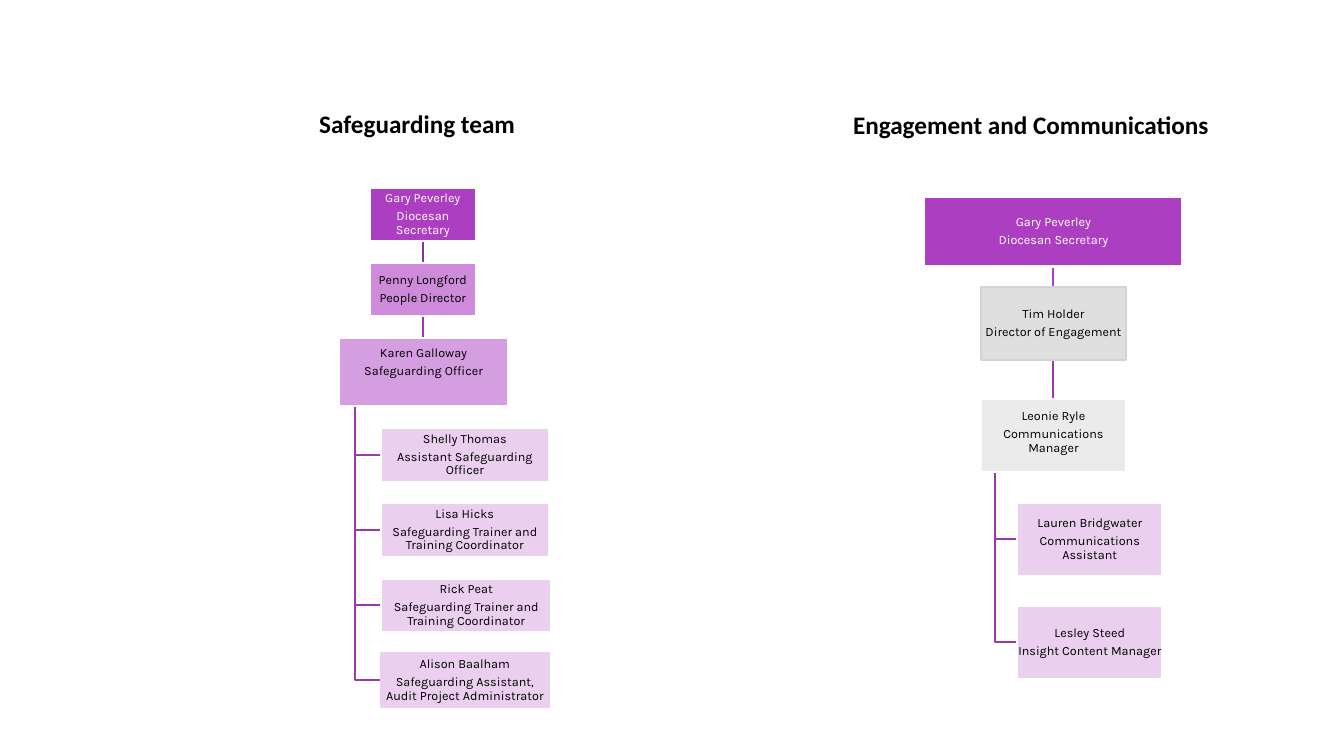
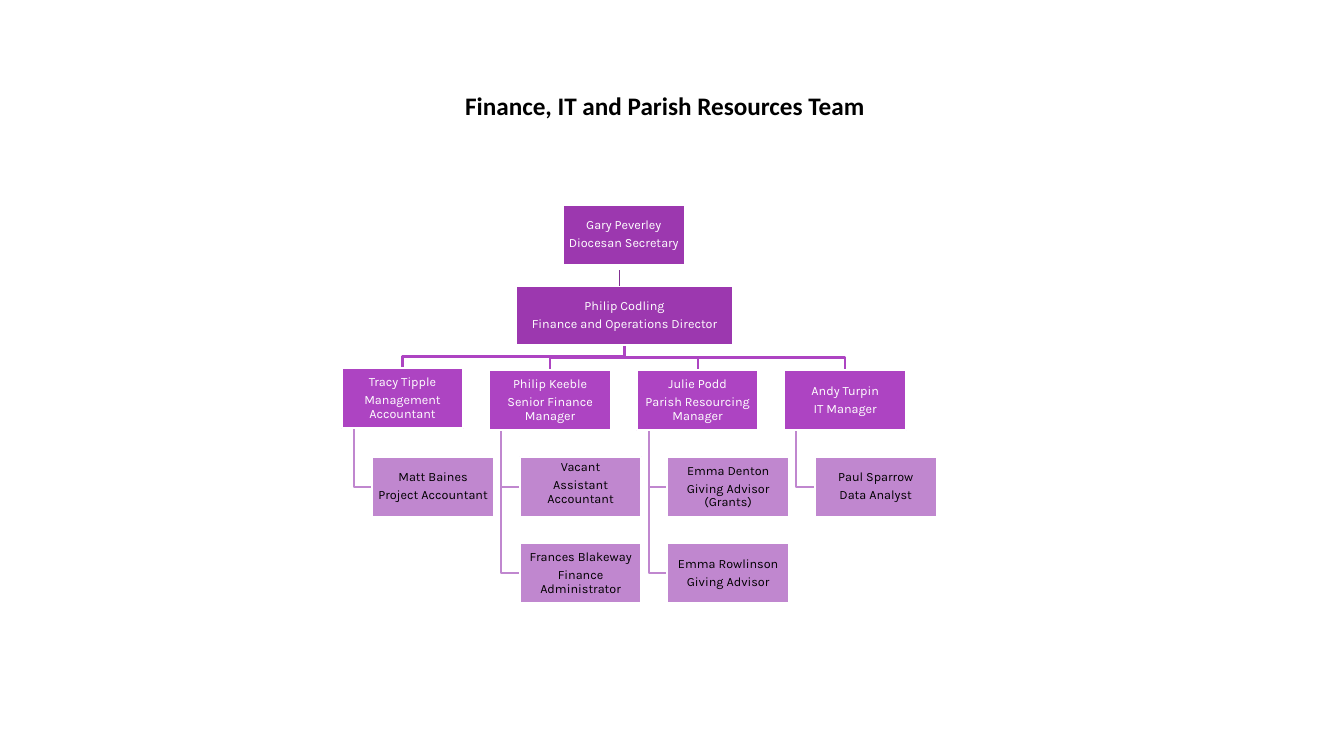
from dataclasses import dataclass

from lxml import etree
from pptx import Presentation
from pptx.dml.color import RGBColor
from pptx.enum import shapes, text
from pptx.oxml import ns
from pptx.util import Pt

WHITE = RGBColor(0xFF, 0xFF, 0xFF)
BLACK = RGBColor(0x00, 0x00, 0x00)
PURPLE = RGBColor(0xAC, 0x3E, 0xC1)
ORCHID = RGBColor(0xCD, 0x8B, 0xDA)
LILAC = RGBColor(0xD5, 0x9E, 0xE0)
PALE = RGBColor(0xEA, 0xCF, 0xEF)
DEEP = RGBColor(0x9C, 0x38, 0xAF)
PLUM = RGBColor(0x8A, 0x32, 0x9B)
DARK = RGBColor(0x81, 0x2F, 0x91)
VIOLET = RGBColor(0xAD, 0x44, 0xC2)
MAUVE = RGBColor(0xC0, 0x87, 0xCF)
GREY = RGBColor(0xDF, 0xDF, 0xDF)
GREY_EDGE = RGBColor(0xD3, 0xD3, 0xD3)
LIGHT_GREY = RGBColor(0xEB, 0xEB, 0xEB)

HEADING_FONT = "Calibri"
CARD_FONT = "Karla"
LINE_WIDTH = 1.5
TITLE_ONLY = 5


@dataclass
class Box:
    left: float
    top: float
    width: float
    height: float

    @property
    def center(self):
        return self.left + self.width / 2

    @property
    def middle(self):
        return self.top + self.height / 2

    @property
    def bottom(self):
        return self.top + self.height

    @property
    def points(self):
        return [Pt(n) for n in (self.left, self.top, self.width, self.height)]

    def inner(self, left, top, width, height):
        return Box(self.left + left, self.top + top, width, height)


def set_heading(shape, box, wording):
    shape.left, shape.top, shape.width, shape.height = box.points
    frame = shape.text_frame
    frame.text = wording
    frame.word_wrap = True
    frame.auto_size = text.MSO_AUTO_SIZE.NONE
    frame.vertical_anchor = text.MSO_ANCHOR.MIDDLE
    para = frame.paragraphs[0]
    para.alignment = text.PP_ALIGN.CENTER
    para.font.name = HEADING_FONT
    para.font.size = Pt(18)
    para.font.bold = True
    para.font.color.rgb = BLACK


def add_card(page, box, name, role, fill, ink=BLACK, edge=WHITE, lift=0):
    card = page.shapes.add_shape(shapes.MSO_SHAPE.RECTANGLE, *box.points)
    card.shadow.inherit = False
    card.fill.solid()
    card.fill.fore_color.rgb = fill
    card.line.color.rgb = edge
    card.line.width = Pt(LINE_WIDTH)
    frame = card.text_frame
    frame.word_wrap = True
    frame.vertical_anchor = text.MSO_ANCHOR.MIDDLE
    frame.margin_left = frame.margin_right = frame.margin_top = Pt(0.5)
    frame.margin_bottom = Pt(0.5 + lift)
    frame.text = f"{name}\n{role}"
    for para in frame.paragraphs:
        para.alignment = text.PP_ALIGN.CENTER
        para.line_spacing = 0.9
        para.space_after = Pt(3.15)
        para.font.name = CARD_FONT
        para.font.size = Pt(9)
        para.font.color.rgb = ink


def add_drop(page, x, top, bottom, color, width=LINE_WIDTH):
    drop = page.shapes.add_connector(
        shapes.MSO_CONNECTOR.STRAIGHT, Pt(x), Pt(top), Pt(x), Pt(bottom))
    drop.line.color.rgb = color
    drop.line.width = Pt(width)
    etree.SubElement(drop._element.spPr, ns.qn("a:effectLst"))


def add_bend(page, points, color):
    start, *rest = [(Pt(x), Pt(y)) for x, y in points]
    builder = page.shapes.build_freeform(*start)
    builder.add_line_segments(rest, close=False)
    bend = builder.convert_to_shape()
    bend.shadow.inherit = False
    bend.fill.background()
    bend.line.color.rgb = color
    bend.line.width = Pt(LINE_WIDTH)


def add_reports(page, parent, children, trunk, color):
    for child in children:
        add_bend(page, [(trunk, parent.bottom), (trunk, child.middle),
                        (child.left, child.middle)], color)


def add_safeguarding(page, area):
    pitch = 53.6
    secretary = area.inner(22, 0, 76, 38)
    director = area.inner(22, pitch, 76, 38)
    officer = area.inner(0, 2 * pitch, 121, 49)
    team = [
        ("Shelly Thomas", "Assistant Safeguarding Officer", 120, WHITE),
        ("Lisa Hicks", "Safeguarding Trainer and Training Coordinator", 120, WHITE),
        ("Rick Peat", "Safeguarding Trainer and Training Coordinator", 122, WHITE),
        ("Alison Baalham", "Safeguarding Assistant, Audit Project Administrator",
         120, PALE),
    ]
    boxes = [area.inner(30, 172 + row * pitch, member[2], 38)
             for row, member in enumerate(team)]
    add_reports(page, officer, boxes, area.left + 11.5, DEEP)
    add_drop(page, secretary.center, secretary.bottom, director.top, PLUM)
    add_drop(page, director.center, director.bottom, officer.top, DEEP)
    add_card(page, secretary, "Gary Peverley", "Diocesan Secretary", PURPLE, WHITE)
    add_card(page, director, "Penny Longford", "People Director", ORCHID)
    add_card(page, officer, "Karen Galloway", "Safeguarding Officer", LILAC, lift=14)
    for box, (name, role, _, edge) in zip(boxes, team):
        add_card(page, box, name, role, PALE, edge=edge)


def add_engagement(page, area):
    secretary = area.inner(0, 0, 184.5, 50)
    director = area.inner(40.25, 64.8, 104, 52)
    manager = area.inner(40.25, 144.8, 104, 52)
    team = [("Lauren Bridgwater", "Communications Assistant"),
            ("Lesley Steed", "Insight Content Manager")]
    boxes = [area.inner(66.2, 218.8 + row * 73.6, 104, 52)
             for row in range(len(team))]
    add_reports(page, manager, boxes, area.left + 50.5, DEEP)
    add_drop(page, director.center, director.bottom, manager.top, DEEP)
    add_drop(page, secretary.center, secretary.bottom, director.top, PURPLE)
    add_card(page, secretary, "Gary Peverley", "Diocesan Secretary", PURPLE, WHITE)
    add_card(page, director, "Tim Holder", "Director of Engagement", GREY,
             edge=GREY_EDGE)
    add_card(page, manager, "Leonie Ryle", "Communications Manager", LIGHT_GREY,
             lift=4.5)
    for box, member in zip(boxes, team):
        add_card(page, box, *member, PALE)


def add_finance(page, area):
    width, height = 87, 43
    secretary = area.inner(158, 0, width, height)
    director = area.inner(124.6, 58.4, 155, 41.8)
    teams = [
        (("Tracy Tipple", "Management Accountant"), 116.8,
         [("Matt Baines", "Project Accountant", 0)]),
        (("Philip Keeble", "Senior Finance Manager"), 118.2,
         [("Vacant", "Assistant Accountant", 5),
          ("Frances Blakeway", "Finance Administrator", 0)]),
        (("Julie Podd", "Parish Resourcing Manager"), 118.2,
         [("Emma Denton", "Giving Advisor (Grants)", 0),
          ("Emma Rowlinson", "Giving Advisor", 0)]),
        (("Andy Turpin", "IT Manager"), 118.2,
         [("Paul Sparrow", "Data Analyst", 0)]),
    ]
    for column, (lead, top, reports) in enumerate(teams):
        left = column * 105.4
        manager = area.inner(left, top, width, height)
        boxes = [area.inner(left + 21.8, 180 + row * 61.9, width, height)
                 for row in range(len(reports))]
        turn = (director.bottom + manager.top) / 2
        add_bend(page, [(director.center, director.bottom), (director.center, turn),
                        (manager.center, turn), (manager.center, manager.top)], VIOLET)
        add_reports(page, manager, boxes, manager.left + 8.7, MAUVE)
        add_card(page, manager, *lead, VIOLET, WHITE)
        for box, (name, role, lift) in zip(boxes, reports):
            add_card(page, box, name, role, MAUVE, lift=lift)
    add_card(page, secretary, "Gary Peverley", "Diocesan Secretary", DEEP, WHITE)
    add_card(page, director, "Philip Codling", "Finance and Operations Director",
             DEEP, WHITE)
    add_drop(page, area.left + 198.8, secretary.bottom + 3.8, director.top, DARK, 0.75)


def add_page(deck, box, heading):
    page = deck.slides.add_slide(deck.slide_layouts[TITLE_ONLY])
    set_heading(page.shapes.title, box, heading)
    return page


def main():
    deck = Presentation()
    deck.slide_width, deck.slide_height = Pt(960), Pt(540)

    page = add_page(deck, Box(57, 74, 482, 29), "Safeguarding team")
    box = Box(495.4, 74, 482, 29)
    set_heading(page.shapes.add_textbox(*box.points), box,
                "Engagement and Communications")
    add_safeguarding(page, Box(242, 134, 152, 371))
    add_engagement(page, Box(660.2, 140.4, 184.5, 345))

    page = add_page(deck, Box(234, 60.5, 482, 29),
                    "Finance, IT and Parish Resources Team")
    add_finance(page, Box(244, 146.2, 425, 285))

    deck.save("out.pptx")


if __name__ == "__main__":
    main()
